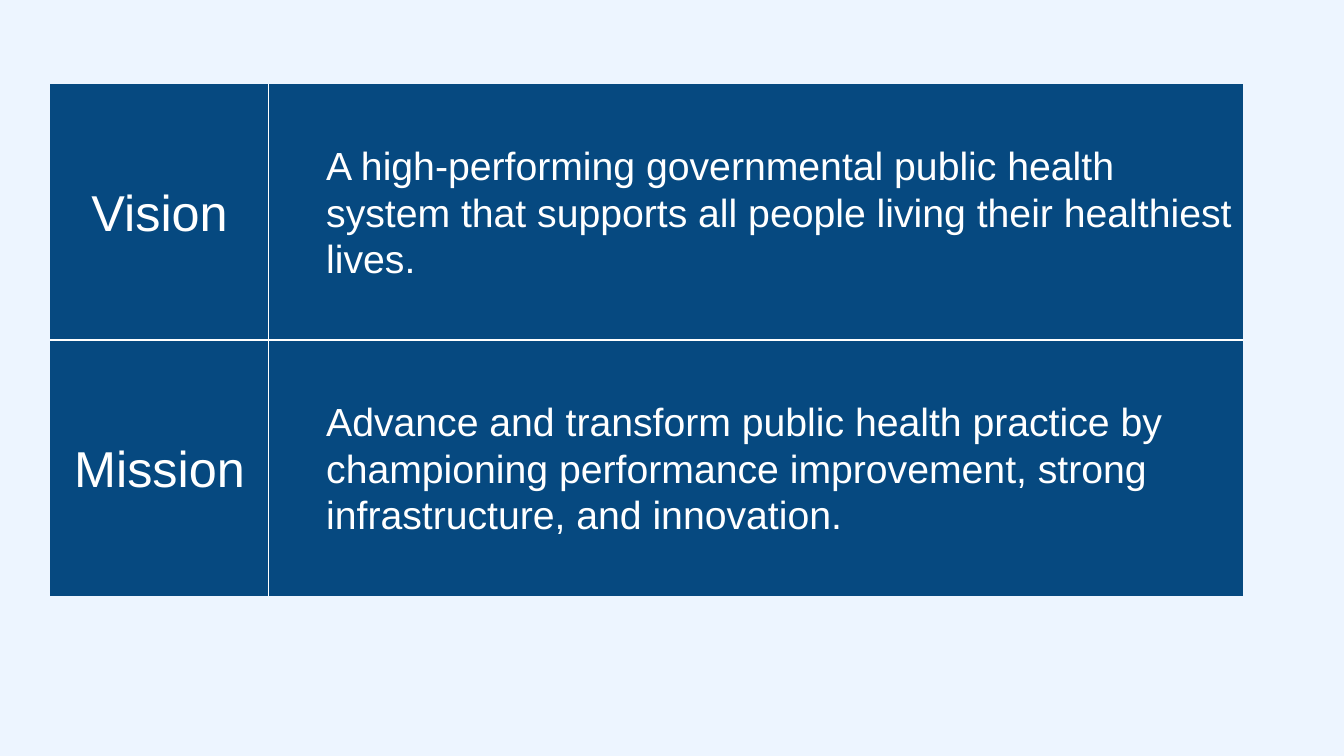
from dataclasses import dataclass

from lxml import etree
from pptx import Presentation
from pptx import util as u
from pptx.dml.color import RGBColor
from pptx.enum import text
from pptx.oxml import ns

SKY = RGBColor(0xED, 0xF5, 0xFF)
NAVY = RGBColor(0x06, 0x49, 0x80)
WHITE = RGBColor(0xFF, 0xFF, 0xFF)

UNIT = u.Inches(1) // 6
WIDE, HIGH = 80, 45
LEFT, TOP = 3, 5
COLS = (13, 58)
ROW = 15.24
INDENT = 3
PLAIN = "{2D5ABB26-0587-4C30-8999-92F81FD0307C}"


@dataclass
class Style:
    size: int
    align: text.PP_ALIGN
    indent: int


@dataclass
class Entry:
    label: str
    body: str


STYLES = (
    Style(36, text.PP_ALIGN.CENTER, 0),
    Style(28, text.PP_ALIGN.LEFT, INDENT),
)
ENTRIES = (
    Entry("Vision", "A high-performing governmental public health system "
          "that supports all people living their healthiest lives."),
    Entry("Mission", "Advance and transform public health practice by "
          "championing performance improvement, strong infrastructure, "
          "and innovation."),
)


def grid(count: float) -> int:
    return round(count * UNIT)


def format(item: object, values: dict) -> None:
    for name, value in values.items():
        setattr(item, name, value)


def rule(cell, side: str) -> None:
    props = cell._tc.get_or_add_tcPr()
    line = etree.SubElement(props, ns.qn(f"a:ln{side}"), w=str(u.Pt(1)))
    fill = etree.SubElement(line, ns.qn("a:solidFill"))
    etree.SubElement(fill, ns.qn("a:srgbClr"), val=str(WHITE))


def write(cell, words: str, style: Style) -> None:
    format(cell, {
        "text": words,
        "vertical_anchor": text.MSO_ANCHOR.MIDDLE,
        "margin_left": u.Inches(0.07),
        "margin_right": u.Inches(0.07),
        "margin_top": 0,
        "margin_bottom": 0,
    })
    para = cell.text_frame.paragraphs[0]
    format(para, {"alignment": style.align, "line_spacing": 1.07})
    para._p.get_or_add_pPr().set("marL", str(grid(style.indent)))
    font = para.runs[0].font
    format(font, {"name": "Arial", "size": u.Pt(style.size)})
    font.color.rgb = WHITE


def paint(cell, row: int, col: int) -> None:
    rule(cell, "L" if col else "R")
    rule(cell, "T" if row else "B")
    cell.fill.solid()
    cell.fill.fore_color.rgb = NAVY


def main() -> None:
    deck = Presentation()
    format(deck, {"slide_width": grid(WIDE), "slide_height": grid(HIGH)})
    slide = deck.slides.add_slide(deck.slide_layouts[6])
    back = slide.background.fill
    back.solid()
    back.fore_color.rgb = SKY

    frame = slide.shapes.add_table(
        len(ENTRIES), len(COLS), grid(LEFT), grid(TOP),
        grid(sum(COLS)), grid(ROW * len(ENTRIES)))
    table = frame.table
    format(table, {"first_row": False, "horz_banding": False})
    table._tbl.tblPr.find(ns.qn("a:tableStyleId")).text = PLAIN
    for col, width in enumerate(COLS):
        table.columns[col].width = grid(width)
    for row, entry in enumerate(ENTRIES):
        table.rows[row].height = grid(ROW)
        for col, words in enumerate((entry.label, entry.body)):
            cell = table.cell(row, col)
            write(cell, words, STYLES[col])
            paint(cell, row, col)
    deck.save("out.pptx")


if __name__ == "__main__":
    main()
